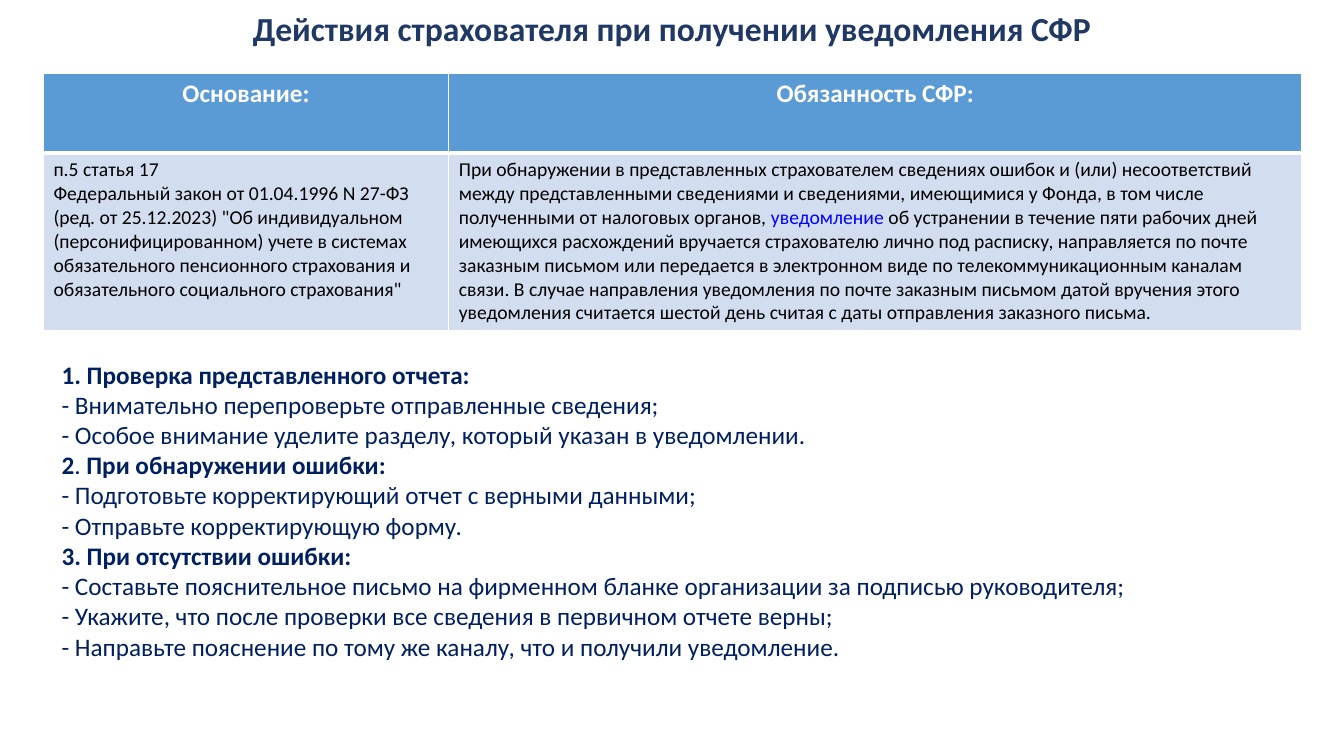
from pptx import Presentation
from pptx.dml.color import RGBColor
from pptx.enum.text import MSO_ANCHOR as Anchor, MSO_AUTO_SIZE as AutoSize, PP_ALIGN as Align
from pptx.oxml import parse_xml
from pptx.oxml.ns import nsdecls
from pptx.util import Inches, Pt

TITLE_BLUE = RGBColor(0x20, 0x38, 0x64)
STEP_BLUE = RGBColor(0x00, 0x20, 0x60)
HEADER_BLUE = RGBColor(0x5B, 0x9B, 0xD5)
CELL_BLUE = RGBColor(0xD2, 0xDE, 0xEF)
LINK_BLUE = RGBColor(0x00, 0x00, 0xFF)
WHITE = RGBColor(0xFF, 0xFF, 0xFF)
BLACK = RGBColor(0x00, 0x00, 0x00)

HEADERS = ["Основание:", "Обязанность СФР:"]
BASIS = [
    [("п.5 статья 17", {})],
    [("Федеральный закон от 01.04.1996 N 27-ФЗ (ред. от 25.12.2023) \"Об индивидуальном "
      "(персонифицированном) учете в системах обязательного пенсионного страхования и "
      "обязательного социального страхования\"", {})],
]
DUTY = [[
    ("При обнаружении в представленных страхователем сведениях ошибок и (или) несоответствий "
     "между представленными сведениями и сведениями, имеющимися у Фонда, в том числе "
     "полученными от налоговых органов, ", {}),
    ("уведомление", {"color": LINK_BLUE}),
    (" об устранении в течение пяти рабочих дней имеющихся расхождений вручается страхователю "
     "лично под расписку, направляется по почте заказным письмом или передается в электронном "
     "виде по телекоммуникационным каналам связи. В случае направления уведомления по почте "
     "заказным письмом датой вручения этого уведомления считается шестой день считая с даты "
     "отправления заказного письма.", {}),
]]
BOLD = {"bold": True}
STEPS = [
    [("1. Проверка представленного отчета:", BOLD)],
    [("- Внимательно перепроверьте отправленные сведения;", {})],
    [("- Особое внимание уделите разделу, который указан в уведомлении.", {})],
    [("2", BOLD), (". ", {}), ("При обнаружении ошибки:", BOLD)],
    [("- Подготовьте корректирующий отчет с верными данными;", {})],
    [("- Отправьте корректирующую форму.", {})],
    [("3. При отсутствии ошибки:", BOLD)],
    [("- Составьте пояснительное письмо на фирменном бланке организации за подписью "
      "руководителя;", {})],
    [("- Укажите, что после проверки все сведения в первичном отчете верны;", {})],
    [("- Направьте пояснение по тому же каналу, что и получили уведомление.", {})],
]


class NoticeSlide:
    """Style and current slide, laid out on a grid of 100 columns and 100 rows."""

    font_name = "Calibri"
    grid = 100

    def __init__(self, presentation):
        self.column = presentation.slide_width / self.grid
        self.row = presentation.slide_height / self.grid
        self.slide = presentation.slides.add_slide(presentation.slide_layouts[1])

    def place(self, left, top, width, height):
        return {"left": round(left * self.column), "top": round(top * self.row),
                "width": round(width * self.column), "height": round(height * self.row)}

    def apply(self, target, values):
        for name, value in values.items():
            if name == "color":
                target.color.rgb = value
            else:
                setattr(target, name, value)

    def fill_text(self, frame, paragraphs, style, layout, bullet_free=False):
        for index, runs in enumerate(paragraphs):
            paragraph = frame.paragraphs[0] if index == 0 else frame.add_paragraph()
            if bullet_free:
                properties = paragraph._p.get_or_add_pPr()
                properties.set("marL", "0")
                properties.set("indent", "0")
                properties.append(parse_xml(f"<a:buNone {nsdecls('a')}/>"))
            self.apply(paragraph, layout)
            for text, changes in runs:
                run = paragraph.add_run()
                run.text = text
                self.apply(run.font, {"name": self.font_name, **style, **changes})

    def title(self, text, box, style):
        shape = self.slide.shapes.title
        self.apply(shape, self.place(*box))
        self.apply(shape.text_frame, {
            "margin_left": 0, "margin_right": 0, "margin_bottom": 0,
            "margin_top": Inches(0.08), "vertical_anchor": Anchor.TOP,
            "auto_size": AutoSize.NONE, "word_wrap": True})
        self.fill_text(shape.text_frame, [[(text, {})]], style, {"alignment": Align.CENTER})

    def steps(self, paragraphs, box, style):
        shape = self.slide.placeholders[1]
        self.apply(shape, self.place(*box))
        self.apply(shape.text_frame, {"auto_size": AutoSize.NONE, "word_wrap": True})
        self.fill_text(shape.text_frame, paragraphs, style, {"space_before": Pt(0)}, True)

    def borders(self, cell, widths):
        properties = cell._tc.get_or_add_tcPr()
        for side, width in widths.items():
            properties.append(parse_xml(
                f'<a:ln{side} {nsdecls("a")} w="{Pt(width)}"><a:solidFill>'
                f'<a:srgbClr val="{WHITE}"/></a:solidFill></a:ln{side}>'))

    def table(self, rows, box, columns, heights, looks):
        frame = self.slide.shapes.add_table(len(rows), len(columns), **self.place(*box))
        table = frame.table
        for column, width in zip(table.columns, columns):
            column.width = round(width * self.column)
        for row, height, contents, look in zip(table.rows, heights, rows, looks):
            row.height = round(height * self.row)
            for cell, paragraphs in zip(row.cells, contents):
                self.borders(cell, look["borders"])
                cell.fill.solid()
                cell.fill.fore_color.rgb = look["fill"]
                self.fill_text(cell.text_frame, paragraphs, look["style"], look["layout"])


def main():
    presentation = Presentation()
    presentation.slide_width, presentation.slide_height = Inches(13.33), Inches(7.5)
    page = NoticeSlide(presentation)
    page.title("Действия страхователя при получении уведомления СФР", (0, 0, 100, 6.27),
               {"size": Pt(24), "bold": True, "color": TITLE_BLUE})
    header = {"fill": HEADER_BLUE, "borders": {"L": 1, "R": 1, "T": 1, "B": 3},
              "style": {"size": Pt(18), "bold": True, "color": WHITE},
              "layout": {"alignment": Align.CENTER}}
    body = {"fill": CELL_BLUE, "borders": {"L": 1, "R": 1, "T": 3, "B": 1},
            "style": {"size": Pt(14), "bold": False, "color": BLACK},
            "layout": {"alignment": Align.LEFT}}
    page.table([[[[(text, {})]] for text in HEADERS], [BASIS, DUTY]],
               (3.23, 9.73, 93.62, 33.6), (30.16, 63.46), (10.53, 23.07), (header, body))
    page.steps(STEPS, (3.83, 46.8, 84.47, 41.73),
               {"size": Pt(18), "bold": False, "color": STEP_BLUE})
    presentation.save("out.pptx")


if __name__ == "__main__":
    main()
